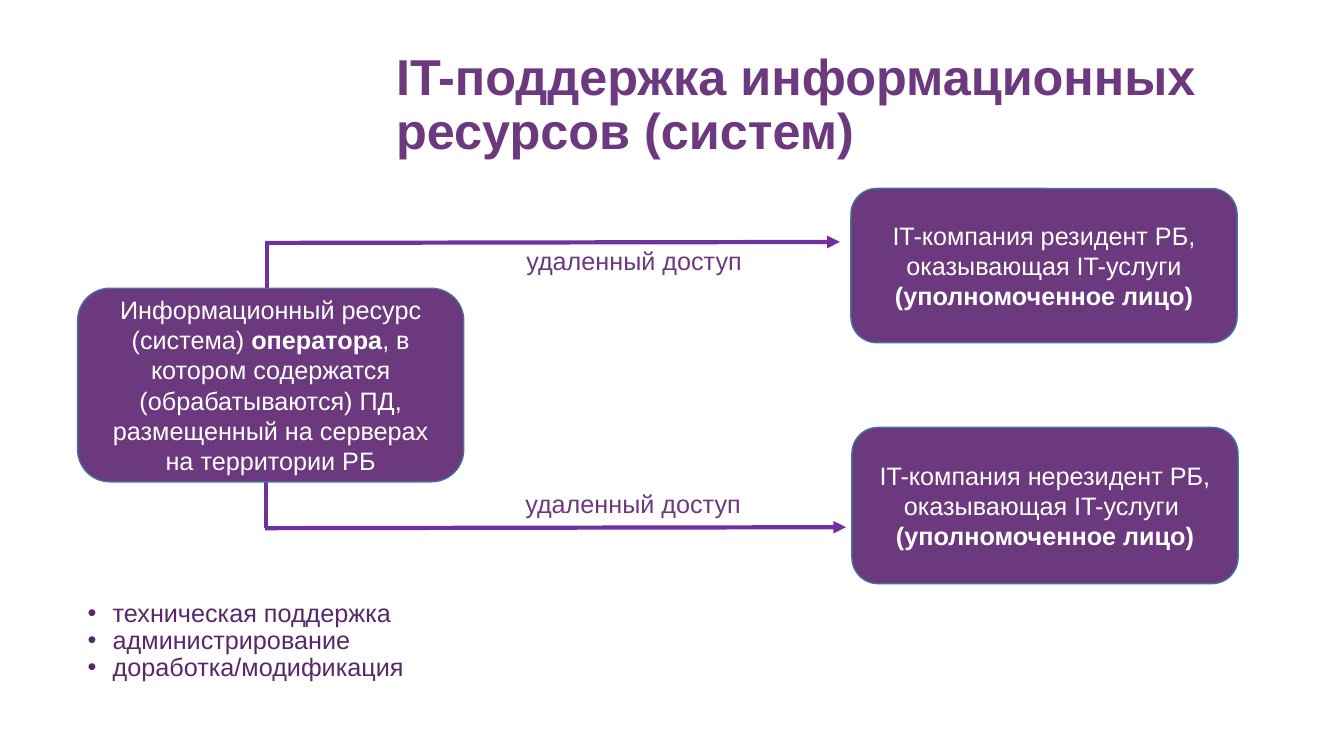
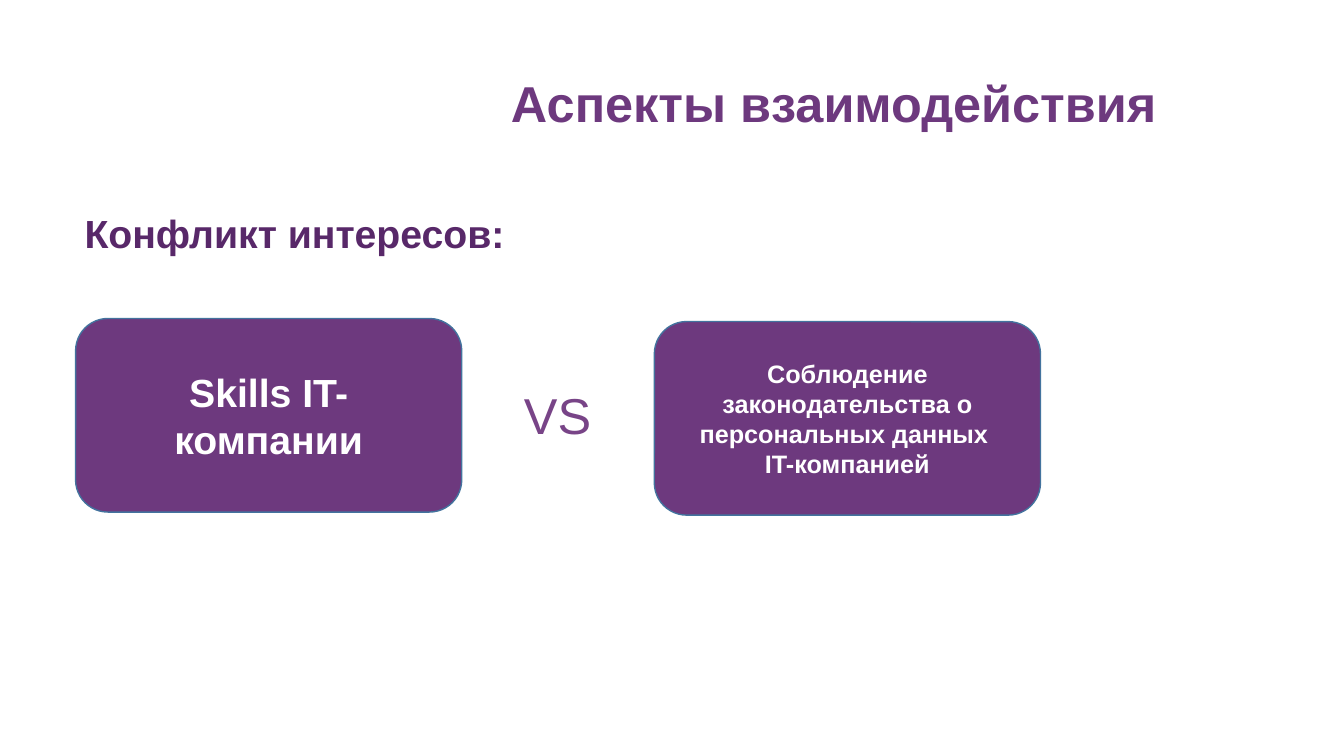
from lxml import etree
from pptx import Presentation
from pptx.dml.color import RGBColor
from pptx.enum.shapes import MSO_CONNECTOR, MSO_SHAPE
from pptx.enum.text import MSO_ANCHOR, PP_ALIGN
from pptx.oxml.ns import qn
from pptx.util import Inches, Pt

ROUND = MSO_SHAPE.ROUNDED_RECTANGLE
LINE = MSO_CONNECTOR.STRAIGHT
MID, TOP = MSO_ANCHOR.MIDDLE, MSO_ANCHOR.TOP
LEFT, CENTER = PP_ALIGN.LEFT, PP_ALIGN.CENTER

FONT = "Arial"
PLUM, DARK, SOFT = "6D397E", "582869", "784487"
WHITE, EDGE, ARROW = "FFFFFF", "43739E", "7030A0"
WIDE, TALL = 3.83, 1.92

ROLE = ("(уполномоченное лицо)", True)
ACCESS = "удаленный доступ"

SLIDES = [
    {
        "title": ((3.83, 0.45, 8.42, 1.21), 0,
                  ["IT-поддержка информационных", "\n", "ресурсов (систем)"]),
        "body": ((0.77, 5.91, 3.37, 0.96),
                 [["техническая поддержка"], ["администрирование"],
                  ["доработка/модификация"]],
                 {"size": 18, "gap": 0.9, "bullet": True}),
        "lines": [
            ((2.65, 2.86), (2.65, 2.41), False),
            ((2.64, 5.24), (2.64, 4.78), False),
            ((2.63, 2.41), (8.33, 2.4), True),
            ((2.63, 5.24), (8.39, 5.23), True),
        ],
        "cards": [
            ((0.77, 2.86, WIDE, TALL), 18,
             [["Информационный ресурс (система) ", ("оператора", True),
               ", в котором содержатся (обрабатываются) ПД, "
               "размещенный на серверах на территории РБ"]]),
            ((8.44, 1.87, WIDE, 1.53), 18,
             [["IT-компания резидент РБ, оказывающая IT-услуги ", ROLE]]),
            ((8.45, 4.24, WIDE, 1.55), 18,
             [["IT-компания нерезидент РБ, оказывающая IT-услуги "], [ROLE]]),
        ],
        "labels": [
            ((4.66, 2.49, 3.26, 0.19), 18, PLUM, ACCESS),
            ((4.65, 4.9, 3.26, 0.19), 18, PLUM, ACCESS),
        ],
    },
    {
        "title": ((3.86, 0.33, 8.39, 1.45), 1.11, ["Аспекты взаимодействия"]),
        "body": ((0.74, 1.98, 11.81, 5.09), [["Конфликт интересов:"]],
                 {"size": 28, "bold": True, "gap": 1.1}),
        "lines": [],
        "cards": [
            ((0.75, 3.16, WIDE, TALL), 28, [[("Skills IT-компании", True)]]),
            ((6.49, 3.19, WIDE, TALL), 18,
             [[("Соблюдение законодательства о персональных данных ", True)],
              [("IT-компанией", True)]]),
        ],
        "labels": [((4.77, 3.75, 1.52, 0.73), 36, SOFT, "VS")],
    },
]


def color(code):
    return RGBColor.from_string(code)


def write(shape, paras, size, ink, bold=False, align=LEFT, anchor=MID,
          gap=None, indent=0, bullet=False):
    frame = shape.text_frame
    frame.word_wrap = True
    frame.vertical_anchor = anchor
    for i, runs in enumerate(paras):
        para = frame.paragraphs[0] if i == 0 else frame.add_paragraph()
        para.alignment = align
        if gap:
            para.line_spacing = gap
        props = para._p.get_or_add_pPr()
        if bullet:
            props.set("marL", str(Inches(0.25)))
            props.set("indent", str(-Inches(0.25)))
            etree.SubElement(props, qn("a:buFont"), typeface=FONT)
            etree.SubElement(props, qn("a:buChar"), char="•")
        elif indent:
            props.set("marL", str(Inches(indent)))
        font = para.font
        font.name, font.size, font.bold = FONT, Pt(size), bold
        font.color.rgb = color(ink)
        for item in runs:
            if item == "\n":
                para.add_line_break()
                continue
            text, strong = (item, None) if isinstance(item, str) else item
            run = para.add_run()
            run.text = text
            if strong:
                run.font.bold = True


def add_text(slide, box, paras, **style):
    write(slide.shapes.add_textbox(*map(Inches, box)), paras, **style)


def add_box(slide, box, fill, edge, paras, **style):
    shape = slide.shapes.add_shape(ROUND, *map(Inches, box))
    shape.shadow.inherit = False
    shape.fill.solid()
    shape.fill.fore_color.rgb = color(fill)
    if edge:
        shape.line.color.rgb = color(edge)
        shape.line.width = Pt(1)
    else:
        shape.line.fill.background()
    write(shape, paras, align=CENTER, **style)


def add_line(slide, start, end, head):
    link = slide.shapes.add_connector(LINE, *map(Inches, start + end))
    link.line.color.rgb = color(ARROW)
    link.line.width = Pt(3)
    if head:
        etree.SubElement(link.line._get_or_add_ln(), qn("a:tailEnd"),
                         type="triangle")
    etree.SubElement(link._element.spPr, qn("a:effectLst"))


def build(deck, data):
    slide = deck.slides.add_slide(deck.slide_layouts[6])
    box, indent, title = data["title"]
    add_text(slide, box, [title], size=36, ink=PLUM, bold=True, gap=0.9,
             indent=indent)
    box, paras, style = data["body"]
    add_text(slide, box, paras, ink=DARK, anchor=TOP, **style)
    for start, end, head in data["lines"]:
        add_line(slide, start, end, head)
    for box, size, paras in data["cards"]:
        add_box(slide, box, PLUM, EDGE, paras, size=size, ink=WHITE)
    for box, size, ink, text in data["labels"]:
        add_box(slide, box, WHITE, None, [[text]], size=size, ink=ink)


def main():
    deck = Presentation()
    deck.slide_width, deck.slide_height = Inches(13.33), Inches(7.5)
    for data in SLIDES:
        build(deck, data)
    deck.save("out.pptx")


if __name__ == "__main__":
    main()
